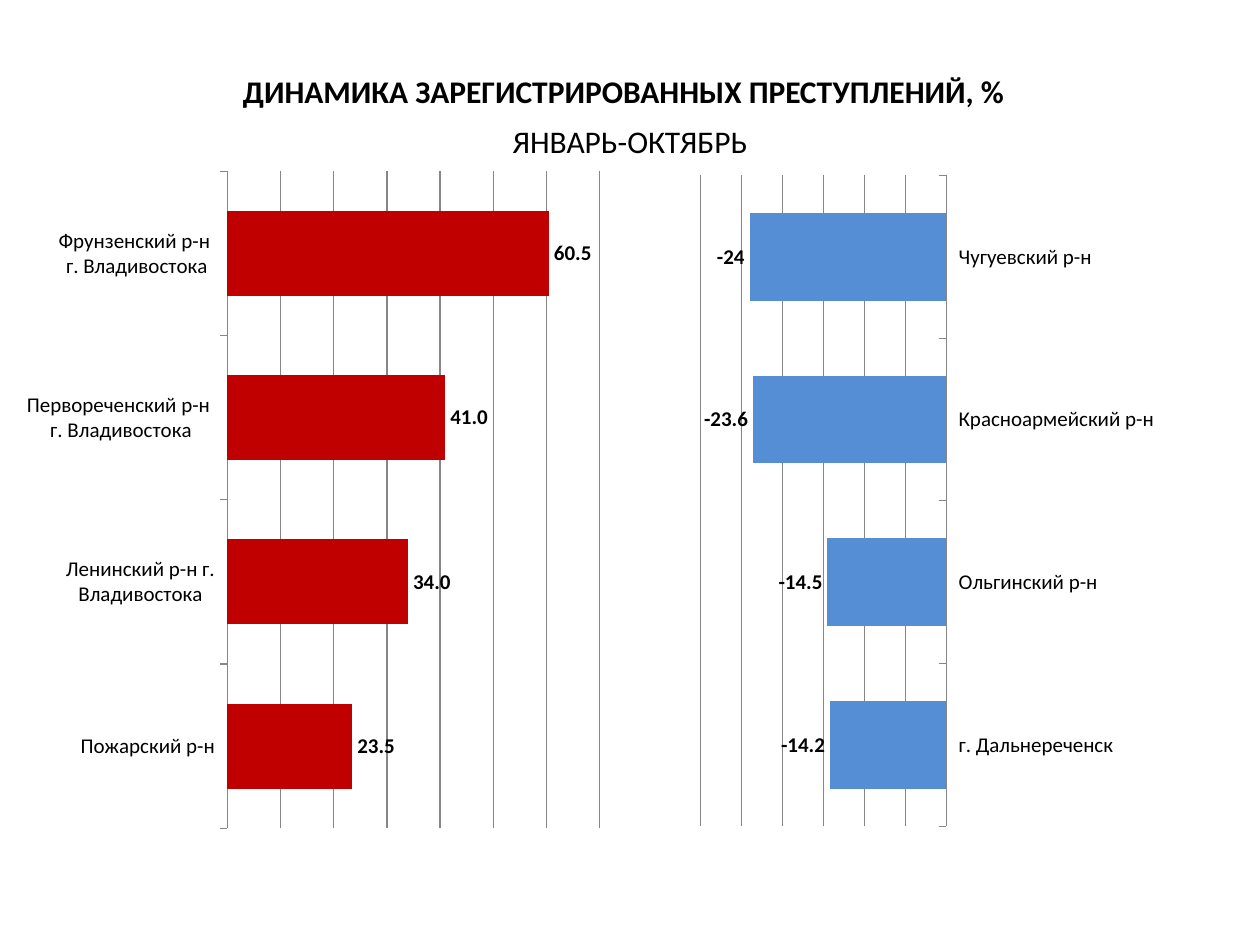
from lxml import etree
from pptx import Presentation
from pptx.chart.data import CategoryChartData
from pptx.dml.color import RGBColor
from pptx.enum.chart import (
    XL_CHART_TYPE as ChartType,
    XL_LABEL_POSITION as LabelPosition,
    XL_TICK_LABEL_POSITION as TickLabels,
    XL_TICK_MARK as TickMark,
)
from pptx.enum.text import MSO_ANCHOR as Anchor, MSO_AUTO_SIZE as AutoSize, PP_ALIGN as Align
from pptx.oxml.ns import qn
from pptx.util import Inches, Pt

WIDTH, HEIGHT = Inches(10), Inches(7.5)
FONT = "Calibri"
BLACK = RGBColor(0x00, 0x00, 0x00)
GRAY = RGBColor(0x86, 0x86, 0x86)
RED = RGBColor(0xC0, 0x00, 0x00)
BLUE = RGBColor(0x55, 0x8E, 0xD5)

# Boxes: left, top, width, height as shares of the slide
TITLE_BOX = (0.18, 0.07, 0.63, 0.054)
PERIOD_BOX = (0.396, 0.123, 0.208, 0.054)
GROWTH_BOX = (0, 0.159, 0.547, 0.74)
DECLINE_BOX = (0.516, 0.164, 0.5, 0.725)

GROWTH = {
    "Пожарский р-н": 23.5,
    "Ленинский р-н г. Владивостока": 34,
    "Первореченский р-н \nг. Владивостока": 41,
    "Фрунзенский р-н \nг. Владивостока": 60.5,
}
DECLINE = {
    "г. Дальнереченск": -14.2,
    "Ольгинский р-н": -14.5,
    "Красноармейский р-н": -23.6,
    "Чугуевский р-н": -24,
}


def to_slide(box):
    left, top, width, height = box
    return (round(left * WIDTH), round(top * HEIGHT),
            round(width * WIDTH), round(height * HEIGHT))


def format_font(font, size, bold=False):
    font.name, font.size, font.bold = FONT, Pt(size), bold
    font.color.rgb = BLACK


def write_text(shape, text, size=18, bold=False):
    frame = shape.text_frame
    frame.word_wrap = False
    frame.auto_size = AutoSize.SHAPE_TO_FIT_TEXT
    frame.vertical_anchor = Anchor.TOP
    paragraph = frame.paragraphs[0]
    paragraph.alignment = Align.CENTER
    run = paragraph.add_run()
    run.text = text
    format_font(run.font, size, bold)


def set_plot_layout(chart, plot_box):
    """Fix the inner plot area, given as shares of the chart."""
    area = chart._chartSpace.chart.plotArea
    for old in area.findall(qn("c:layout")):
        area.remove(old)
    layout = etree.Element(qn("c:layout"))
    area.insert(0, layout)
    manual = etree.SubElement(layout, qn("c:manualLayout"))
    settings = [("layoutTarget", "inner"), ("xMode", "edge"), ("yMode", "edge")]
    settings += zip("xywh", plot_box)
    for name, value in settings:
        etree.SubElement(manual, qn(f"c:{name}")).set("val", str(value))


def add_bars(slide, box, values, color, plot_box, scale, gap, overlap=0,
             number_format="General", tick_labels=TickLabels.NEXT_TO_AXIS):
    data = CategoryChartData(number_format=number_format)
    data.categories = list(values)
    data.add_series("Series 1", list(values.values()))
    chart = slide.shapes.add_chart(
        ChartType.BAR_CLUSTERED, *to_slide(box), data).chart
    chart.has_legend = chart.has_title = False
    format_font(chart.font, 18)
    set_plot_layout(chart, plot_box)

    # Bars and their values
    plot = chart.plots[0]
    plot.gap_width, plot.overlap, plot.vary_by_categories = gap, overlap, False
    series = plot.series[0]
    series.invert_if_negative = False
    series.format.fill.solid()
    series.format.fill.fore_color.rgb = color
    labels = series.data_labels
    labels.show_value = True
    labels.position = LabelPosition.OUTSIDE_END
    labels.number_format, labels.number_format_is_linked = number_format, False
    format_font(labels.font, 12, bold=True)

    # District axis and grid
    districts, percent = chart.category_axis, chart.value_axis
    districts.has_major_gridlines = False
    districts.major_tick_mark = TickMark.OUTSIDE
    districts.tick_label_position = tick_labels
    format_font(districts.tick_labels.font, 12)
    percent.minimum_scale, percent.maximum_scale, percent.major_unit = scale
    percent.has_major_gridlines = True
    percent.visible = False
    for line in (districts.format.line, percent.major_gridlines.format.line):
        line.color.rgb = GRAY
        line.width = Pt(0.75)


def add_heading(slide, title_box, period_box):
    title = slide.shapes.title
    title.left, title.top, title.width, title.height = to_slide(title_box)
    write_text(title, "ДИНАМИКА ЗАРЕГИСТРИРОВАННЫХ ПРЕСТУПЛЕНИЙ, %", bold=True)
    period = slide.shapes.add_textbox(*to_slide(period_box))
    write_text(period, "ЯНВАРЬ-ОКТЯБРЬ")


def main():
    presentation = Presentation()
    presentation.slide_width, presentation.slide_height = WIDTH, HEIGHT
    slide = presentation.slides.add_slide(presentation.slide_layouts[5])
    add_heading(slide, TITLE_BOX, PERIOD_BOX)
    add_bars(slide, DECLINE_BOX, DECLINE, BLUE, (0.08, 0.03, 0.39, 0.95),
             scale=(-30, 0, 5), gap=86, tick_labels=TickLabels.HIGH)
    add_bars(slide, GROWTH_BOX, GROWTH, RED, (0.33, 0.03, 0.54, 0.94),
             scale=(0, 70, 10), gap=93, overlap=-49, number_format="0.0")
    presentation.save("out.pptx")


if __name__ == "__main__":
    main()
